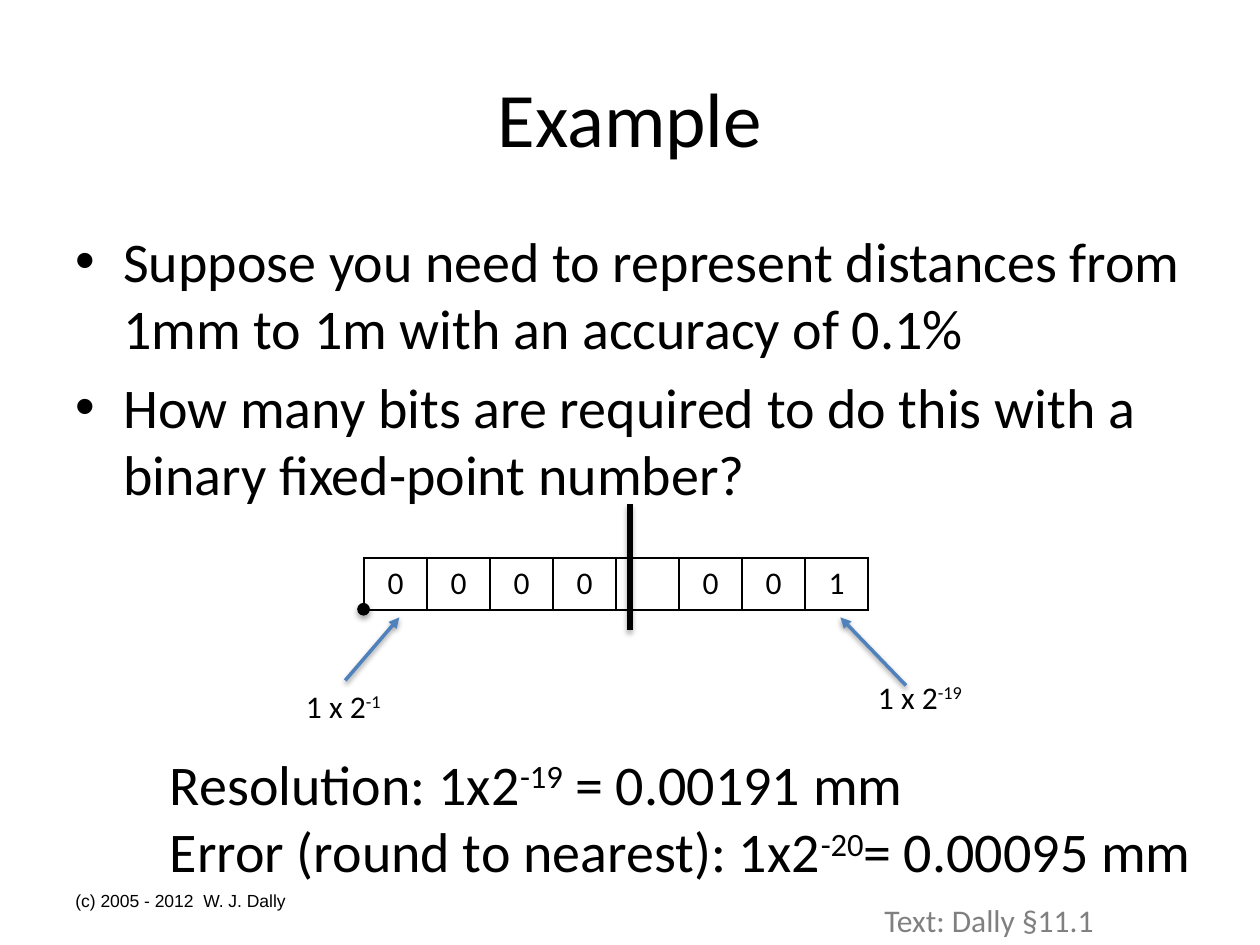
from lxml import etree
from pptx import Presentation
from pptx.dml.color import RGBColor
from pptx.enum.shapes import MSO_CONNECTOR, MSO_SHAPE
from pptx.enum.text import MSO_ANCHOR, PP_ALIGN
from pptx.oxml.ns import qn
from pptx.util import Inches, Pt

BLACK = RGBColor(0x00, 0x00, 0x00)
GRAY = RGBColor(0x80, 0x80, 0x80)
BLUE = RGBColor(0x4F, 0x81, 0xBD)
CENTER, MIDDLE = PP_ALIGN.CENTER, MSO_ANCHOR.MIDDLE
STRAIGHT, OVAL = MSO_CONNECTOR.STRAIGHT, MSO_SHAPE.OVAL
TITLE_ONLY = 5

BITS = ["0", "0", "0", "0", "", "0", "0", "1"]
BIT_WIDTH, BIT_HEIGHT = 0.5, 0.41
QUESTIONS = [
    "Suppose you need to represent distances from 1mm to 1m with an accuracy of 0.1%",
    "How many bits are required to do this with a binary fixed-point number?",
]
# Each segment: two control points and an end point
BREAK_START = (5.23, 4.25)
BREAK_CURVES = [
    ((5.22, 4.27), (5.21, 4.30), (5.20, 4.32)),
    ((5.20, 4.34), (5.20, 4.35), (5.19, 4.37)),
    ((5.18, 4.38), (5.17, 4.39), (5.16, 4.39)),
    ((5.15, 4.41), (5.14, 4.48), (5.13, 4.50)),
    ((5.12, 4.51), (5.11, 4.53), (5.10, 4.54)),
    ((5.11, 4.57), (5.11, 4.60), (5.12, 4.63)),
    ((5.14, 4.68), (5.24, 4.67), (5.26, 4.67)),
    ((5.27, 4.68), (5.28, 4.70), (5.28, 4.71)),
    ((5.28, 4.76), (5.27, 4.80), (5.26, 4.84)),
    ((5.25, 4.87), (5.23, 4.88), (5.22, 4.90)),
    ((5.21, 4.92), (5.20, 4.93), (5.19, 4.95)),
    ((5.09, 5.05), (5.14, 4.98), (5.10, 5.05)),
]


def style(paragraph, size, color=BLACK, font="Calibri"):
    paragraph.font.size = Pt(size)
    paragraph.font.name = font
    paragraph.font.color.rgb = color


def add_shadow(shape, alpha, distance):
    """Give a shape a soft shadow straight below it."""
    effects = etree.SubElement(shape._element.spPr, qn("a:effectLst"))
    shadow = etree.SubElement(
        effects, qn("a:outerShdw"), blurRad=str(Pt(3.1)), dist=str(Pt(distance)),
        dir="5400000", rotWithShape="0")
    tint = etree.SubElement(shadow, qn("a:srgbClr"), val=str(BLACK))
    etree.SubElement(tint, qn("a:alpha"), val=str(alpha * 1000))


def add_text(slide, box, lines, size, color=BLACK, font="Calibri", wrap=True):
    """Each line is a list of texts; every second one is superscript."""
    frame = slide.shapes.add_textbox(*map(Inches, box)).text_frame
    frame.word_wrap = wrap
    for i, texts in enumerate(lines):
        paragraph = frame.paragraphs[0] if i == 0 else frame.add_paragraph()
        style(paragraph, size, color, font)
        for j, text in enumerate(texts):
            run = paragraph.add_run()
            run.text = text
            if j % 2:
                run.font._element.set("baseline", "30000")
    return frame


def add_bullets(slide, box, items):
    frame = add_text(slide, box, [[item] for item in items], 32)
    for paragraph in frame.paragraphs:
        paragraph.space_before = Pt(6.4)
        properties = paragraph._p.get_or_add_pPr()
        properties.set("marL", str(Inches(0.38)))
        properties.set("indent", str(-Inches(0.38)))
        etree.SubElement(properties, qn("a:buFont"), typeface="Arial")
        etree.SubElement(properties, qn("a:buChar"), char="•")


def add_borders(cell):
    properties = cell._tc.get_or_add_tcPr()
    for i, side in enumerate(("lnL", "lnR", "lnT", "lnB")):
        border = etree.Element(qn(f"a:{side}"), w=str(Pt(1)))
        fill = etree.SubElement(border, qn("a:solidFill"))
        etree.SubElement(fill, qn("a:srgbClr"), val=str(BLACK))
        properties.insert(i, border)


def add_bit_row(slide, left, top):
    table = slide.shapes.add_table(
        1, len(BITS), Inches(left), Inches(top),
        Inches(BIT_WIDTH * len(BITS)), Inches(BIT_HEIGHT)).table
    table.first_row = table.horz_banding = False
    for i, bit in enumerate(BITS):
        cell = table.cell(0, i)
        cell.text = bit
        cell.fill.background()
        add_borders(cell)
        paragraph = cell.text_frame.paragraphs[0]
        paragraph.alignment = CENTER
        style(paragraph, 18)


def bezier(points, t):
    weights = ((1 - t) ** 3, 3 * t * (1 - t) ** 2, 3 * t ** 2 * (1 - t), t ** 3)
    return tuple(sum(w * p[axis] for w, p in zip(weights, points)) for axis in (0, 1))


def add_break_mark(slide):
    points, start = [], BREAK_START
    for curve in BREAK_CURVES:
        points += [bezier((start, *curve), step / 4) for step in range(1, 5)]
        start = curve[-1]
    builder = slide.shapes.build_freeform(*BREAK_START, scale=Inches(1))
    builder.add_line_segments(points, close=False)
    mark = builder.convert_to_shape()
    mark.fill.background()
    mark.line.color.rgb = BLACK
    mark.line.width = Pt(3)
    add_shadow(mark, 35, 1.8)


def add_binary_point(slide, box):
    point = slide.shapes.add_shape(OVAL, *map(Inches, box))
    point.fill.solid()
    point.fill.fore_color.rgb = BLACK
    point.line.color.rgb = BLACK
    point.line.width = Pt(0.75)
    add_shadow(point, 35, 1.8)


def add_arrow(slide, start, end):
    arrow = slide.shapes.add_connector(STRAIGHT, *map(Inches, (*start, *end)))
    arrow.line.color.rgb = BLUE
    arrow.line.width = Pt(2)
    etree.SubElement(arrow.line._get_or_add_ln(), qn("a:tailEnd"), type="triangle")
    add_shadow(arrow, 38, 1.6)


def main():
    prs = Presentation()
    prs.slide_width, prs.slide_height = Inches(10), Inches(7.5)
    slide = prs.slides.add_slide(prs.slide_layouts[TITLE_ONLY])

    # Title and questions
    title = slide.shapes.title
    title.left, title.top, title.width, title.height = map(Inches, (0.5, 0.3, 9, 1.25))
    title.text_frame.text = "Example"
    title.text_frame.vertical_anchor = MIDDLE
    heading = title.text_frame.paragraphs[0]
    heading.alignment = CENTER
    style(heading, 44)
    add_bullets(slide, (0.5, 1.75, 9, 4.95), QUESTIONS)

    # Fixed-point number with its break and binary point
    add_bit_row(slide, 2.89, 4.43)
    add_break_mark(slide)
    add_binary_point(slide, (2.84, 4.79, 0.09, 0.09))

    # Weights of the first and last bits
    add_arrow(slide, (2.74, 5.4), (3.17, 4.9))
    add_text(slide, (2.33, 5.4, 0.82, 0.4), [["1 x 2", "-1"]], 18, wrap=False)
    add_text(slide, (6.87, 5.33, 0.9, 0.4), [["1 x 2", "-19"]], 18, wrap=False)
    add_arrow(slide, (7.19, 5.44), (6.67, 4.9))

    # Answer
    add_text(slide, (1.25, 5.9, 8.44, 1.18), [
        ["Resolution: 1x2", "-19", " = 0.00191 mm"],
        ["Error (round to nearest): 1x2", "-20", "= 0.00095 mm"],
    ], 32, wrap=False)

    # Footer and reference
    footer = add_text(slide, (0.5, 6.95, 2.33, 0.4),
                      [["(c) 2005 - 2012  W. J. Dally"]], 10, font="Arial")
    footer.vertical_anchor = MIDDLE
    add_text(slide, (6.92, 7.1, 2.08, 0.4), [["Text: Dally §11.1"]], 18, GRAY)

    prs.save("out.pptx")


if __name__ == "__main__":
    main()
